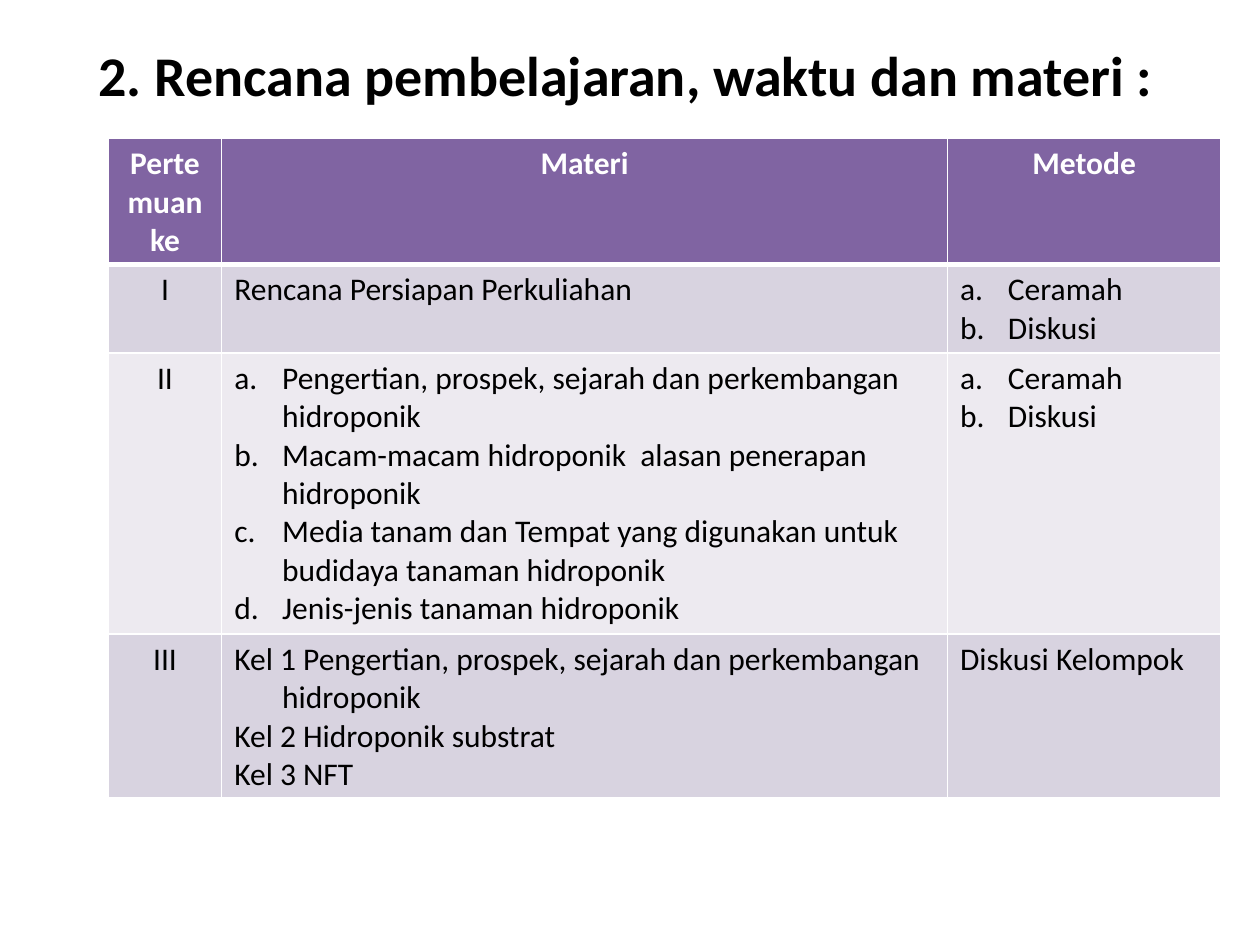
from lxml import etree
from pptx import Presentation
from pptx.dml.color import RGBColor
from pptx.enum.text import MSO_ANCHOR, PP_ALIGN
from pptx.oxml.ns import qn
from pptx.util import Inches, Pt

CENTER, LEFT = PP_ALIGN.CENTER, PP_ALIGN.LEFT
MIDDLE = MSO_ANCHOR.MIDDLE

FONT = "Calibri"
BLACK = RGBColor(0x00, 0x00, 0x00)
WHITE = RGBColor(0xFF, 0xFF, 0xFF)
PURPLE = RGBColor(0x80, 0x64, 0xA2)
BAND_DARK = RGBColor(0xD8, 0xD3, 0xE0)
BAND_LIGHT = RGBColor(0xED, 0xEA, 0xF0)

COL_WIDTHS = (0.9, 5.76, 2.17)
ROW_HEIGHTS = (1.0, 0.7, 2.23, 1.27)
HEADERS = ("Pertemuan ke", "Materi", "Metode")
METHODS = ["Ceramah", "Diskusi"]

# Each meeting: number, (topics, lettered), (methods, lettered)
MEETINGS = [
    ("I", (["Rencana Persiapan Perkuliahan"], False), (METHODS, True)),
    ("II", ([
        "Pengertian, prospek, sejarah dan perkembangan hidroponik",
        "Macam-macam hidroponik  alasan penerapan hidroponik",
        "Media tanam dan Tempat yang digunakan untuk budidaya tanaman hidroponik",
        "Jenis-jenis tanaman hidroponik",
    ], True), (METHODS, True)),
    ("III", ([
        "Kel 1 Pengertian, prospek, sejarah dan perkembangan hidroponik",
        "Kel 2 Hidroponik substrat",
        "Kel 3 NFT",
    ], False), (["Diskusi Kelompok"], False)),
]


def add_run(p, text, size, color, bold=False):
    r = p.add_run()
    r.text = text
    r.font.name = FONT
    r.font.size = Pt(size)
    r.font.bold = bold
    r.font.color.rgb = color


def set_hanging(p, lettered):
    """Hanging indent, with a., b., c. when lettered."""
    pPr = p._p.get_or_add_pPr()
    indent = Inches(0.38)
    pPr.set("marL", str(indent))
    pPr.set("indent", str(-indent))
    if lettered:
        etree.SubElement(pPr, qn("a:buFont"), typeface="+mj-lt")
        etree.SubElement(pPr, qn("a:buAutoNum"), type="alphaLcPeriod")
    else:
        etree.SubElement(pPr, qn("a:buNone"))


def set_borders(cell, top=1, bottom=1):
    tcPr = cell._tc.get_or_add_tcPr()
    for side, width in (("L", 1), ("R", 1), ("T", top), ("B", bottom)):
        ln = etree.SubElement(tcPr, qn(f"a:ln{side}"), w=str(Pt(width)))
        fill = etree.SubElement(ln, qn("a:solidFill"))
        etree.SubElement(fill, qn("a:srgbClr"), val=str(WHITE))


def fill_cell(cell, lines, fill, color=BLACK, bold=False, align=LEFT, lettered=False):
    cell.fill.solid()
    cell.fill.fore_color.rgb = fill
    tf = cell.text_frame
    for i, line in enumerate(lines):
        p = tf.add_paragraph() if i else tf.paragraphs[0]
        p.alignment = align
        if align == LEFT:
            set_hanging(p, lettered)
        add_run(p, line, 18, color, bold)


def add_title(s, left, top, width, height):
    tf = s.shapes.add_textbox(left, top, width, height).text_frame
    tf.word_wrap = True
    tf.vertical_anchor = MIDDLE
    p = tf.paragraphs[0]
    p.alignment = CENTER
    add_run(p, "2. Rencana pembelajaran, waktu dan materi :", 32, BLACK, True)


def add_plan(s, left, top, width, height):
    table = s.shapes.add_table(len(ROW_HEIGHTS), len(COL_WIDTHS),
                               left, top, width, height).table
    for col, w in zip(table.columns, COL_WIDTHS):
        col.width = Inches(w)
    for row, h in zip(table.rows, ROW_HEIGHTS):
        row.height = Inches(h)

    # Header row, set off by a thicker line
    for c, header in enumerate(HEADERS):
        cell = table.cell(0, c)
        set_borders(cell, bottom=3)
        fill_cell(cell, [header], PURPLE, WHITE, True, CENTER)

    # One banded row for each meeting
    for i, (number, *columns) in enumerate(MEETINGS, start=1):
        band = BAND_DARK if i % 2 else BAND_LIGHT
        for c in range(len(COL_WIDTHS)):
            set_borders(table.cell(i, c), top=3 if i == 1 else 1)
        fill_cell(table.cell(i, 0), [number], band, align=CENTER)
        for c, (lines, lettered) in enumerate(columns, start=1):
            fill_cell(table.cell(i, c), lines, band, lettered=lettered)


def main():
    prs = Presentation()
    prs.slide_width, prs.slide_height = Inches(10), Inches(7.5)
    s = prs.slides.add_slide(prs.slide_layouts[6])
    add_title(s, Inches(0.47), Inches(0.16), Inches(9), Inches(0.86))
    add_plan(s, Inches(0.86), Inches(1.1), Inches(8.83), Inches(5.2))
    prs.save("out.pptx")


if __name__ == "__main__":
    main()
